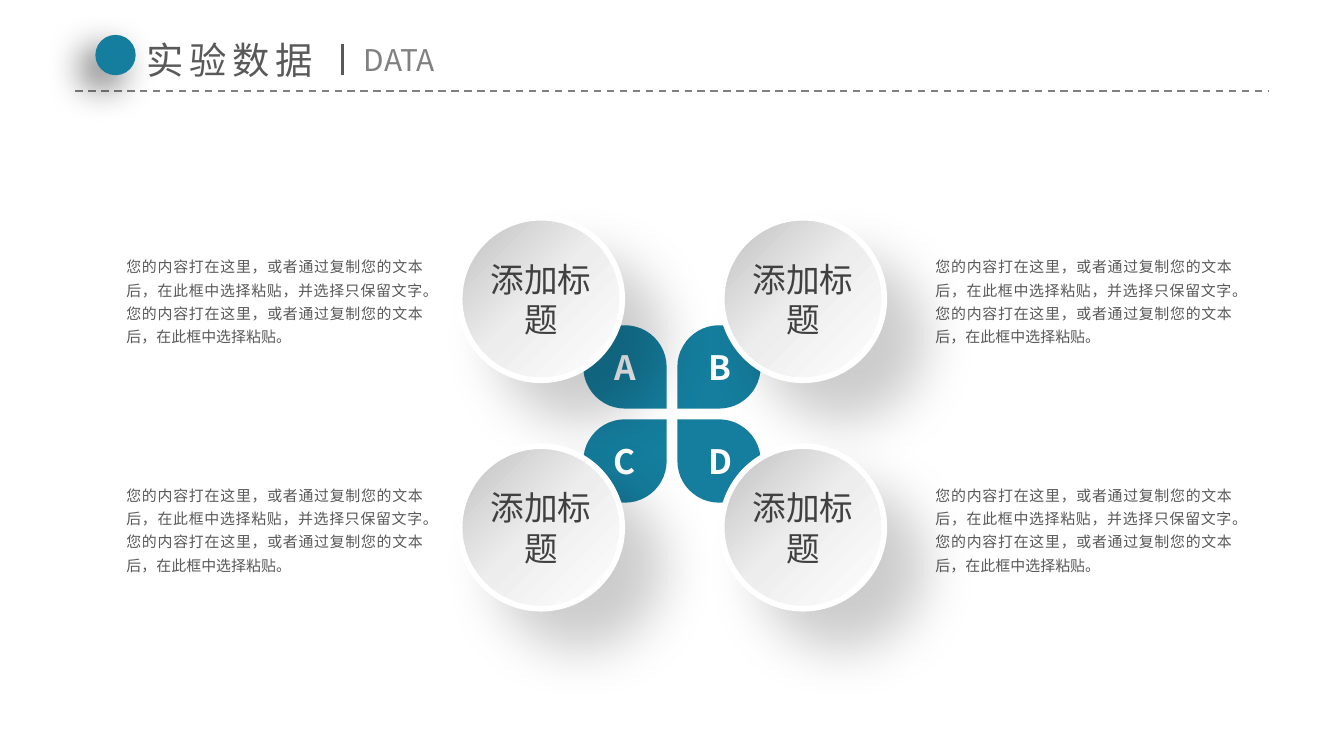
from dataclasses import dataclass

import pptx
import pptx.dml.color
import pptx.enum.dml
import pptx.enum.shapes
import pptx.enum.text
import pptx.oxml
import pptx.oxml.ns
import pptx.oxml.xmlchemy
import pptx.shapes.autoshape
import pptx.slide
import pptx.text.text
import pptx.util

Inches = pptx.util.Inches
Pt = pptx.util.Pt
Kind = pptx.enum.shapes.MSO_SHAPE
Align = pptx.enum.text.PP_ALIGN
Anchor = pptx.enum.text.MSO_ANCHOR
Shape = pptx.shapes.autoshape.Shape
Slide = pptx.slide.Slide

WIDE = 10
HIGH = WIDE * 9 / 16
FONT = "Noto Sans CJK SC"
COLORS = {
    "teal": "157D9D",
    "white": "FFFFFF",
    "dark": "404040",
    "text": "595959",
    "gray": "808080",
    "black": "000000",
}
STOPS = [(0, "C0C0C0"), (49, "EDEDED"), (100, "FFFFFF")]
LABEL = "添加标题"
NOTE = (
    "您的内容打在这里，或者通过复制您的文本后，在此框中选择粘贴，并选择只保留文字。"
    "您的内容打在这里，或者通过复制您的文本后，在此框中选择粘贴。"
)
PETAL = 0.62
DISC = 1.21


@dataclass
class Item:
    letter: str
    col: int
    row: int
    turn: int


ITEMS = [
    Item("A", 0, 0, 90),
    Item("B", 1, 0, 180),
    Item("C", 0, 1, 0),
    Item("D", 1, 1, 270),
]


def rgb(name: str) -> pptx.dml.color.RGBColor:
    return pptx.dml.color.RGBColor.from_string(COLORS[name])


def box(*sides: float) -> list[pptx.util.Length]:
    return [Inches(side) for side in sides]


def element(body: str) -> pptx.oxml.xmlchemy.BaseOxmlElement:
    """Parse one DrawingML element, given without its opening bracket and prefix."""
    space = pptx.oxml.ns.nsdecls("a")
    tag, rest = body.split(" ", 1)
    return pptx.oxml.parse_xml(f"<a:{tag} {space} {rest}")


def write(
    frame: pptx.text.text.TextFrame,
    text: str,
    size: float,
    color: str,
    wrap: bool = False,
    align: Align = Align.LEFT,
    bold: bool = False,
    gap: int = 0,
) -> pptx.text.text._Paragraph:
    """Fill a frame with one paragraph; gap is letter spacing in points."""
    frame.text = text
    frame.word_wrap = wrap
    para = frame.paragraphs[0]
    para.alignment = align
    font = para.font
    font.size, font.bold, font.name = Pt(size), bold, FONT
    font.color.rgb = rgb(color)
    props = para._p.pPr.find(pptx.oxml.ns.qn("a:defRPr"))
    props.append(element(f'ea typeface="{FONT}"/>'))
    if gap:
        props.set("spc", str(gap * 100))
    return para


def fit(frame: pptx.text.text.TextFrame) -> None:
    frame.auto_size = pptx.enum.text.MSO_AUTO_SIZE.SHAPE_TO_FIT_TEXT


def add_flat(shapes, kind: Kind, *sides: float) -> Shape:
    """Add a teal shape with no outline and no shadow."""
    shape = shapes.add_shape(kind, *box(*sides))
    shape.fill.solid()
    shape.fill.fore_color.rgb = rgb("teal")
    shape.line.fill.background()
    shape.shadow.inherit = False
    return shape


def cast(shape: Shape, alpha: int, blur: int, dist: int, angle: int) -> None:
    """Give a shape an outer shadow: percent, points, points, degrees."""
    effects = shape._element.spPr.find(pptx.oxml.ns.qn("a:effectLst"))
    effects.append(element(
        f'outerShdw blurRad="{Pt(blur)}" dist="{Pt(dist)}" dir="{angle * 60000}" '
        f'rotWithShape="0"><a:srgbClr val="{COLORS["black"]}">'
        f'<a:alpha val="{alpha * 1000}"/></a:srgbClr></a:outerShdw>'
    ))


def add_line(slide: Slide, ends: tuple, color: str, width: float,
             dash: bool = False) -> None:
    line = slide.shapes.add_connector(
        pptx.enum.shapes.MSO_CONNECTOR.STRAIGHT, *box(*ends))
    line.line.color.rgb = rgb(color)
    line.line.width = Pt(width)
    if dash:
        line.line.dash_style = pptx.enum.dml.MSO_LINE.DASH
    line._element.spPr.append(element("effectLst />"))


def add_head(slide: Slide) -> None:
    add_line(slide, (0.56, 0.68, 9.44, 0.68), "gray", 1, dash=True)
    dot = add_flat(slide.shapes, Kind.OVAL, 0.71, 0.26, 0.3, 0.3)
    cast(dot, 60, 20, 10, 135)

    title = slide.shapes.title
    title.left, title.top, title.width, title.height = box(0.99, 0.23, 1.49, 0.44)
    write(title.text_frame, "实验数据", 20, "text", gap=3)
    title.text_frame.vertical_anchor = Anchor.TOP
    fit(title.text_frame)

    sub = slide.shapes.add_textbox(*box(2.61, 0.26, 0.73, 0.37))
    write(sub.text_frame, "DATA", 16, "gray")
    fit(sub.text_frame)
    add_line(slide, (2.55, 0.33, 2.55, 0.56), "text", 1.5)


def add_note(slide: Slide, item: Item) -> None:
    left, top = 0.87 + 6.02 * item.col, 1.84 + 1.7 * item.row
    frame = slide.shapes.add_textbox(*box(left, top, 2.35, 0.78)).text_frame
    frame.margin_left = frame.margin_right = Inches(0.07)
    frame.margin_top = frame.margin_bottom = Inches(0.04)
    para = write(frame, NOTE, 8, "text", wrap=True, align=Align.JUSTIFY)
    para.line_spacing = 1.3
    fit(frame)


def add_petal(slide: Slide, item: Item) -> None:
    left, top = 4.34 + 0.7 * item.col, 2.42 + 0.7 * item.row
    shapes = slide.shapes.add_group_shape().shapes
    petal = add_flat(shapes, Kind.TEAR, left, top, PETAL, PETAL)
    petal.rotation = item.turn
    wide, high = 0.36, 0.4
    mark = add_flat(shapes, Kind.RECTANGLE, left + (PETAL - wide) / 2,
                    top + (PETAL - high) / 2, wide, high)
    write(mark.text_frame, item.letter, 18, "white", align=Align.CENTER, bold=True)
    mark.text_frame.vertical_anchor = Anchor.MIDDLE
    fit(mark.text_frame)


def add_disc(slide: Slide, item: Item) -> None:
    left, top = 3.42 + 1.95 * item.col, 1.62 + 1.7 * item.row
    disc = add_flat(slide.shapes, Kind.OVAL, left, top, DISC, DISC)
    stops = "".join(
        f'<a:gs pos="{pos * 1000}"><a:srgbClr val="{color}"/></a:gs>'
        for pos, color in STOPS
    )
    props = disc._element.spPr
    solid = props.find(pptx.oxml.ns.qn("a:solidFill"))
    props.replace(solid, element(
        f'gradFill rotWithShape="1"><a:gsLst>{stops}</a:gsLst>'
        f'<a:lin ang="{45 * 60000}" scaled="0"/></a:gradFill>'
    ))
    disc.line.color.rgb = rgb("white")
    disc.line.width = Pt(3)
    cast(disc, 20, 29, 29, 45)
    frame = disc.text_frame
    frame.margin_left = frame.margin_right = 0
    frame.margin_top = frame.margin_bottom = Inches(0.04)
    frame.vertical_anchor = Anchor.MIDDLE
    write(frame, LABEL, 18, "dark", wrap=True, align=Align.CENTER)


def main() -> None:
    deck = pptx.Presentation()
    deck.slide_width, deck.slide_height = box(WIDE, HIGH)
    slide = deck.slides.add_slide(deck.slide_layouts[5])
    add_head(slide)
    for draw in (add_note, add_petal, add_disc):
        for item in ITEMS:
            draw(slide, item)
    deck.save("out.pptx")


if __name__ == "__main__":
    main()
